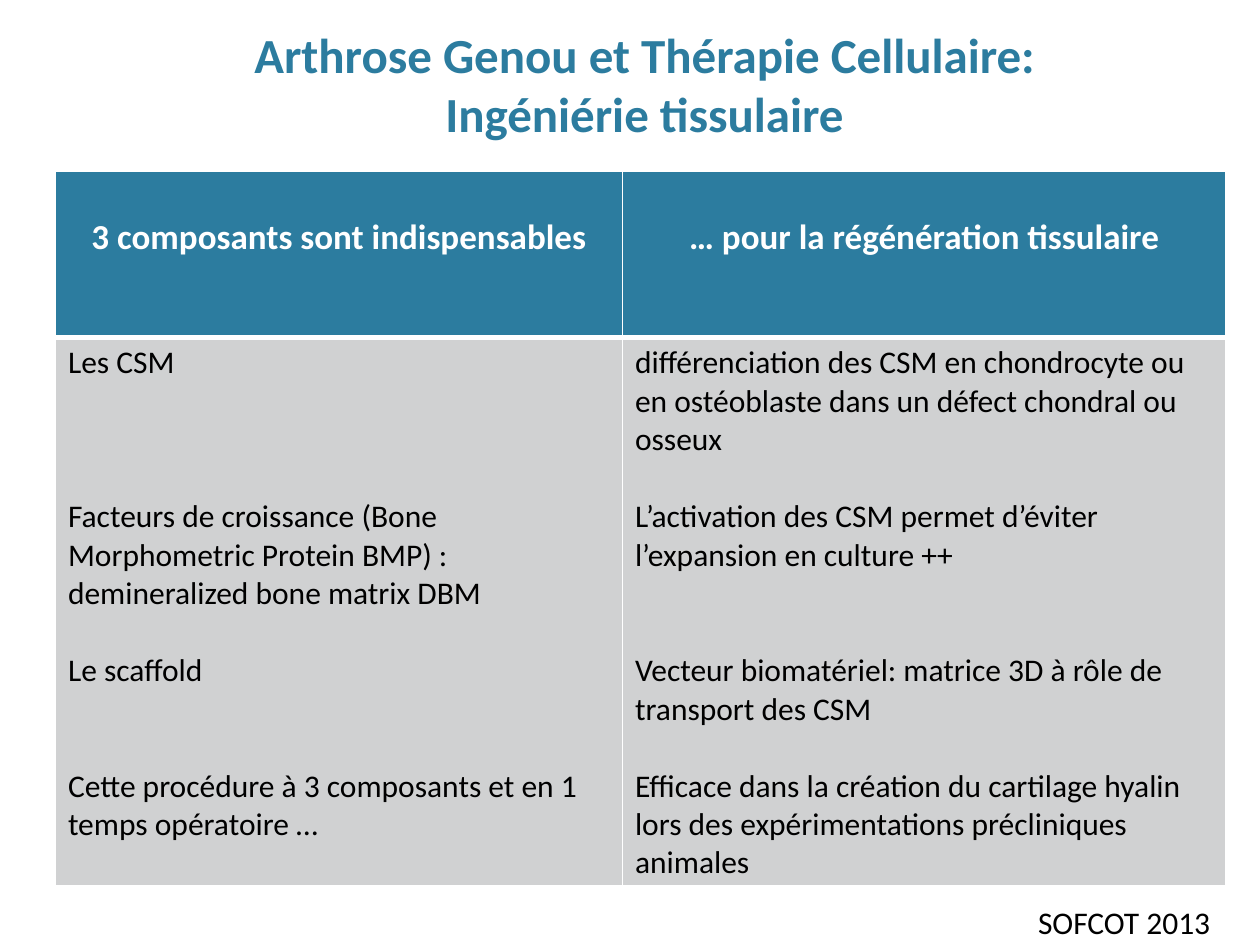
from lxml.etree import SubElement
from pptx import Presentation
from pptx.dml.color import RGBColor
from pptx.enum.text import MSO_ANCHOR, PP_ALIGN
from pptx.oxml.ns import qn
from pptx.util import Inches, Pt

COLORS = {"teal": "2C7C9F", "gray": "D0D1D2", "white": "FFFFFF", "black": "000000"}
BODY_LINE = 22  # points, height of one line of 18 pt text

HEADERS = ["3 composants sont indispensables", "… pour la régénération tissulaire"]
# Each paragraph: number of empty lines above it, text
COLUMNS = [
    [
        (0, "Les CSM"),
        (3, "Facteurs de croissance (Bone Morphometric Protein BMP) : "
            "demineralized bone matrix DBM"),
        (1, "Le scaffold"),
        (2, "Cette procédure à 3 composants et en 1 temps opératoire …"),
    ],
    [
        (0, "différenciation des CSM en chondrocyte ou en ostéoblaste "
            "dans un défect chondral ou osseux"),
        (1, "L’activation des CSM permet d’éviter l’expansion en culture ++"),
        (2, "Vecteur biomatériel: matrice 3D à rôle de transport des CSM"),
        (1, "Efficace dans la création du cartilage hyalin lors des "
            "expérimentations précliniques animales"),
    ],
]


def rgb(name):
    return RGBColor.from_string(COLORS[name])


class SlideBuilder:
    def __init__(self, slide, font="Calibri"):
        self.slide = slide
        self.font = font

    def run(self, p, text, size, color, bold=False):
        r = p.add_run()
        r.text = text
        r.font.name = self.font
        r.font.size = Pt(size)
        r.font.bold = bold
        r.font.color.rgb = rgb(color)

    def text(self, box, lines, size, color, bold=False, align=PP_ALIGN.LEFT,
             anchor=MSO_ANCHOR.TOP, wrap=True):
        tf = self.slide.shapes.add_textbox(*map(Inches, box)).text_frame
        tf.word_wrap = wrap
        tf.vertical_anchor = anchor
        p = tf.paragraphs[0]
        p.alignment = align
        for i, line in enumerate(lines):
            if i:
                p.add_line_break()
            self.run(p, line, size, color, bold)

    def borders(self, cell, **widths):
        """Draw white cell borders; widths in points, keyed by side L, R, T, B."""
        tc_pr = cell._tc.get_or_add_tcPr()
        for side, width in widths.items():
            ln = SubElement(tc_pr, qn(f"a:ln{side}"), w=str(Pt(width)))
            fill = SubElement(ln, qn("a:solidFill"))
            SubElement(fill, qn("a:srgbClr"), val=COLORS["white"])

    def fill(self, cell, color):
        cell.fill.solid()
        cell.fill.fore_color.rgb = rgb(color)

    def table(self, box, widths, heights, headers, columns):
        table = self.slide.shapes.add_table(
            len(heights), len(widths), *map(Inches, box)).table
        table.horz_banding = False
        for row, height in zip(table.rows, heights):
            row.height = Inches(height)
        for i, (width, header, items) in enumerate(zip(widths, headers, columns)):
            table.columns[i].width = Inches(width)
            head, body = table.cell(0, i), table.cell(1, i)

            self.borders(head, L=1, R=1, T=1, B=3)
            self.fill(head, "teal")
            head.margin_top = Inches(0.05) + Pt(BODY_LINE)
            p = head.text_frame.paragraphs[0]
            p.alignment = PP_ALIGN.CENTER
            self.run(p, header, 20, "white", bold=True)

            self.borders(body, L=1, R=1, T=3, B=1)
            self.fill(body, "gray")
            tf = body.text_frame
            for n, (gap, text) in enumerate(items):
                p = tf.add_paragraph() if n else tf.paragraphs[0]
                p.space_before = Pt(gap * BODY_LINE)
                self.run(p, text, 18, "black")


def main():
    prs = Presentation()
    prs.slide_width, prs.slide_height = Inches(10), Inches(7.5)
    s = SlideBuilder(prs.slides.add_slide(prs.slide_layouts[6]))
    s.text((0.47, 0.12, 9.29, 1.06),
           ["Arthrose Genou et Thérapie Cellulaire:", "Ingéniérie tissulaire"],
           28, "teal", bold=True, align=PP_ALIGN.CENTER, anchor=MSO_ANCHOR.BOTTOM)
    s.table((0.44, 1.36, 9.29, 5.67), [4.5, 4.79], [1.32, 4.35], HEADERS, COLUMNS)
    s.text((8.14, 7.12, 1.83, 0.4), ["SOFCOT 2013"], 18, "black", wrap=False)
    prs.save("out.pptx")


if __name__ == "__main__":
    main()
